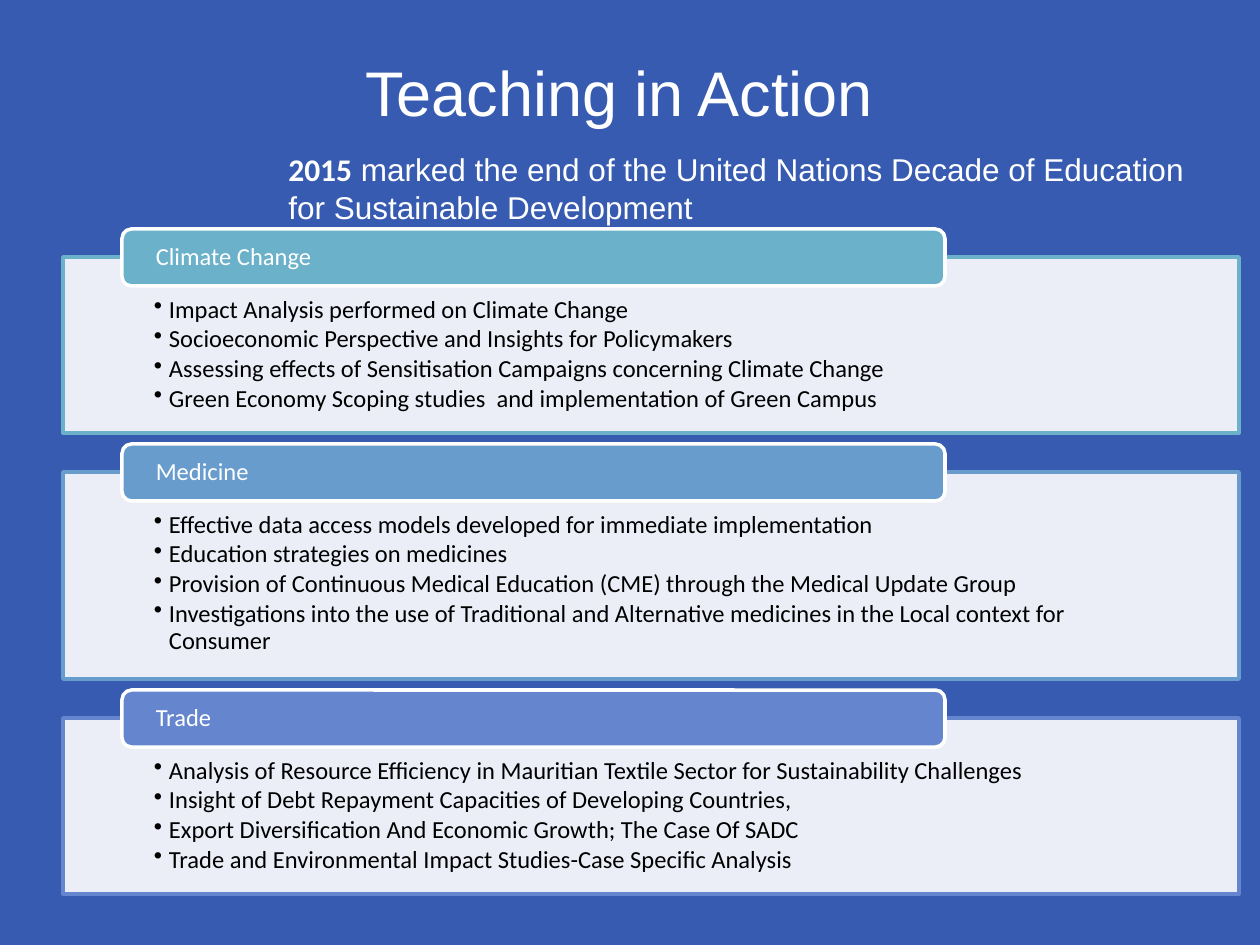
from dataclasses import dataclass

from lxml import etree
from pptx import Presentation
from pptx import util as u
from pptx.dml import color
from pptx.enum import shapes, text
from pptx.oxml import ns

SCALE = 914400 / 126
COLORS = {
    "background": "375BB0",
    "white": "FFFFFF",
    "black": "000000",
    "teal": "6BB1C9",
    "sky": "689CCC",
    "indigo": "6585CF",
}
PANEL_LEFT, PANEL_WIDTH, PANEL_GAP, FIRST_TOP = 63, 1176, 39, 257
HEADER_LEFT, HEADER_WIDTH, HEADER_HEIGHT, HEADER_RISE = 122, 823, 57, 28


@dataclass
class Topic:
    name: str
    color: str
    height: int
    points: list[str]


TOPICS = [
    Topic("Climate Change", "teal", 176, [
        "Impact Analysis performed on Climate Change",
        "Socioeconomic Perspective and Insights for Policymakers",
        "Assessing effects of Sensitisation Campaigns concerning Climate Change",
        "Green Economy Scoping studies  and implementation of Green Campus",
    ]),
    Topic("Medicine", "sky", 207, [
        "Effective data access models developed for immediate implementation",
        "Education strategies on medicines",
        "Provision of Continuous Medical Education (CME) through the Medical Update Group",
        "Investigations into the use of Traditional and Alternative medicines "
        "in the Local context for Consumer",
    ]),
    Topic("Trade", "indigo", 176, [
        "Analysis of Resource Efficiency in Mauritian Textile Sector for Sustainability Challenges",
        "Insight of Debt Repayment Capacities of Developing Countries,",
        "Export Diversification And Economic Growth; The Case Of SADC",
        "Trade and Environmental Impact Studies-Case Specific Analysis",
    ]),
]


def px(n: int) -> u.Emu:
    return u.Emu(round(n * SCALE))


def rgb(name: str) -> color.RGBColor:
    return color.RGBColor.from_string(COLORS[name])


def style_font(font, size: int, name: str, tint: str, bold: bool = False) -> None:
    font.size, font.name, font.bold = u.Pt(size), name, bold
    font.color.rgb = rgb(tint)


def set_margins(tf, left: int, top: int, right: int, bottom: int) -> None:
    tf.margin_left, tf.margin_top = px(left), px(top)
    tf.margin_right, tf.margin_bottom = px(right), px(bottom)


def add_box(s, kind, box: tuple[int, int, int, int], fill: str, line: str):
    sp = s.shapes.add_shape(kind, *map(px, box))
    sp.shadow.inherit = False
    sp.fill.solid()
    sp.fill.fore_color.rgb = rgb(fill)
    sp.line.color.rgb = rgb(line)
    sp.line.width = u.Pt(2)
    sp.text_frame.word_wrap = True
    return sp


def add_textbox(s, box: tuple[int, int, int, int]):
    tf = s.shapes.add_textbox(*map(px, box)).text_frame
    tf.word_wrap = True
    return tf


def add_bullet(p) -> None:
    pPr = p._p.get_or_add_pPr()
    pPr.set("marL", str(px(15)))
    pPr.set("indent", str(-px(15)))
    etree.SubElement(pPr, ns.qn("a:buChar")).set("char", "•")


def add_panel(s, topic: Topic, top: int) -> None:
    sp = add_box(s, shapes.MSO_SHAPE.RECTANGLE,
                 (PANEL_LEFT, top, PANEL_WIDTH, topic.height), "white", topic.color)
    tint = sp._element.spPr.find(ns.qn("a:solidFill"))[0]
    etree.SubElement(tint, ns.qn("a:alpha")).set("val", "90000")
    tf = sp.text_frame
    tf.vertical_anchor = text.MSO_ANCHOR.TOP
    set_margins(tf, 91, 40, 91, 14)
    tf.text = "\n".join(topic.points)
    for p in tf.paragraphs:
        add_bullet(p)
        p.alignment = text.PP_ALIGN.LEFT
        p.line_spacing = 0.9
        p.space_after = u.Pt(1.9)
        style_font(p.runs[0].font, 14, "Calibri", "black")


def add_header(s, topic: Topic, top: int) -> None:
    sp = add_box(s, shapes.MSO_SHAPE.ROUNDED_RECTANGLE,
                 (HEADER_LEFT, top, HEADER_WIDTH, HEADER_HEIGHT), topic.color, "white")
    tf = sp.text_frame
    tf.vertical_anchor = text.MSO_ANCHOR.MIDDLE
    set_margins(tf, 31, 0, 31, 0)
    tf.text = topic.name
    p = tf.paragraphs[0]
    p.alignment = text.PP_ALIGN.LEFT
    p.line_spacing = 0.9
    style_font(p.runs[0].font, 14, "Calibri", "white")


def add_title(s) -> None:
    tf = add_textbox(s, (94, 35, 1050, 112))
    tf.vertical_anchor = text.MSO_ANCHOR.MIDDLE
    tf.text = "Teaching in Action"
    p = tf.paragraphs[0]
    p.alignment = text.PP_ALIGN.CENTER
    style_font(p.runs[0].font, 36, "Arial", "white")


def add_subtitle(s) -> None:
    p = add_textbox(s, (276, 144, 955, 89)).paragraphs[0]
    for words, name, bold in (
        ("2015", "Calibri", True),
        (" marked the end of the United Nations Decade of Education "
         "for Sustainable Development", "Arial", False),
    ):
        r = p.add_run()
        r.text = words
        style_font(r.font, 18, name, "white", bold)


def main() -> None:
    prs = Presentation()
    prs.slide_width, prs.slide_height = px(1260), px(945)
    s = prs.slides.add_slide(prs.slide_layouts[6])
    s.background.fill.solid()
    s.background.fill.fore_color.rgb = rgb("background")
    add_title(s)
    top = FIRST_TOP
    for topic in TOPICS:
        add_panel(s, topic, top)
        add_header(s, topic, top - HEADER_RISE)
        top += topic.height + PANEL_GAP
    add_subtitle(s)
    prs.save("out.pptx")


if __name__ == "__main__":
    main()
